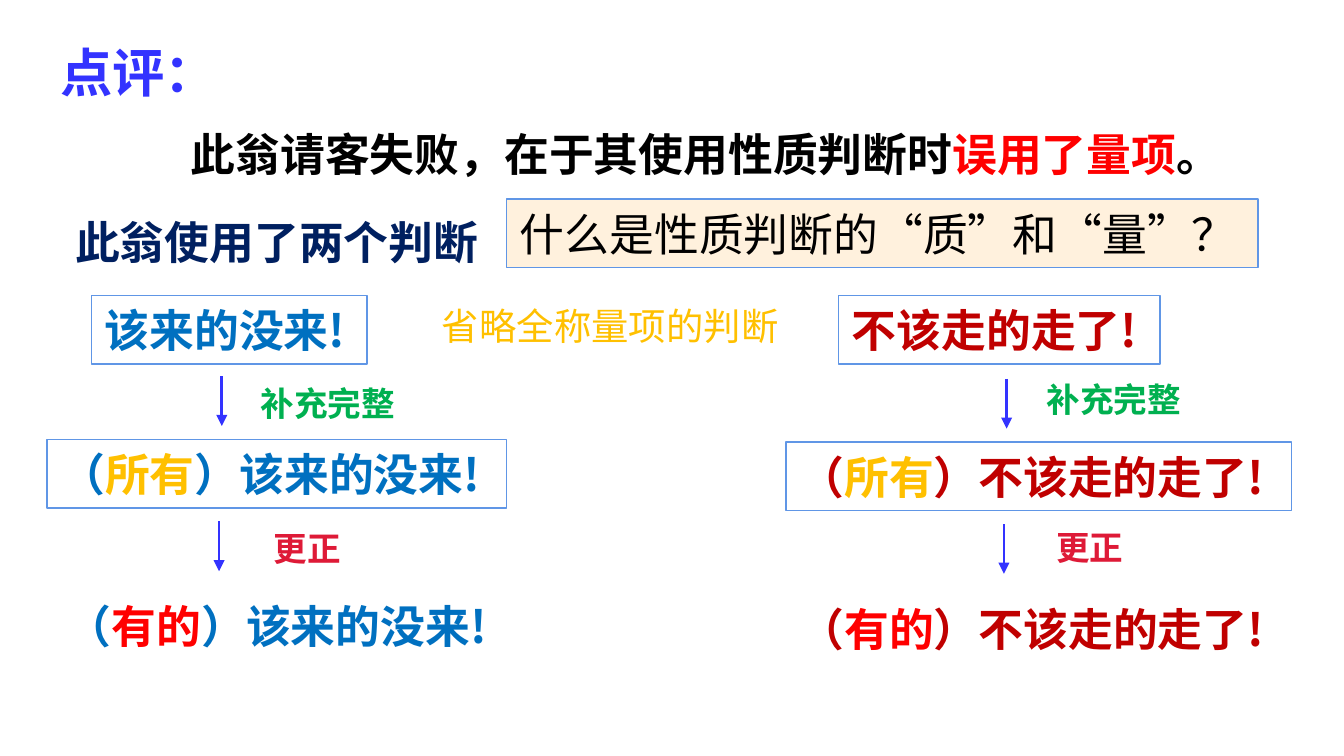
from lxml import etree
from pptx import Presentation
from pptx.dml.color import RGBColor
from pptx.enum.shapes import MSO_CONNECTOR as Conn, MSO_SHAPE as Shape
from pptx.enum.text import MSO_ANCHOR as Anchor, PP_ALIGN as Align
from pptx.oxml.ns import qn
from pptx.util import Inches, Pt

SANS = "Noto Sans CJK SC"
BLUE, DARK, RED, GOLD = "0070C0", "C00000", "FF0000", "FFC000"
GREEN, ROSE, INK, EDGE = "00B050", "DE1A37", "3333FF", "6096E6"


def color(code):
    return RGBColor.from_string(code)


def write(shape, runs, size=24, bold=True, font=SANS):
    """Fill a shape with one line made of (text, colour) runs."""
    frame = shape.text_frame
    frame.word_wrap = False
    frame.vertical_anchor = Anchor.MIDDLE
    para = frame.paragraphs[0]
    para.alignment = Align.LEFT
    for text, code in runs:
        run = para.add_run()
        run.text = text
        run.font.size, run.font.bold, run.font.name = Pt(size), bold, font
        run.font.color.rgb = color(code)
        east = etree.SubElement(run.font._element, qn("a:ea"))
        east.set("typeface", SANS)


def label(slide, box, runs, **form):
    shape = slide.shapes.add_textbox(*map(Inches, box))
    write(shape, runs, **form)


def panel(slide, box, runs, fill=None, **form):
    shape = slide.shapes.add_shape(Shape.RECTANGLE, *map(Inches, box))
    shape.shadow.inherit = False
    if fill:
        shape.fill.solid()
        shape.fill.fore_color.rgb = color(fill)
    else:
        shape.fill.background()
    shape.line.color.rgb = color(EDGE)
    shape.line.width = Pt(0.75)
    write(shape, runs, **form)


def arrow(slide, x, y, high=0.37):
    line = slide.shapes.add_connector(
        Conn.STRAIGHT, Inches(x), Inches(y), Inches(x), Inches(y + high))
    line.line.color.rgb = color(INK)
    line.line.width = Pt(1.5)
    tail = etree.SubElement(line.line._get_or_add_ln(), qn("a:tailEnd"))
    tail.set("type", "triangle")
    etree.SubElement(line._element.spPr, qn("a:effectLst"))


def header(slide, x, y):
    # Title and main point
    title = slide.shapes.title
    title.left, title.top = Inches(x), Inches(y)
    title.width, title.height = Inches(1.38), Inches(0.57)
    write(title, [("点评：", INK)], size=28, font="Arial")
    label(slide, (x + 0.97, y + 0.64, 7.98, 0.5),
          [("此翁请客失败，在于其使用性质判断时", "000000"),
           ("误用了量项", RED), ("。", "000000")])
    # Lead-in and question
    label(slide, (x + 0.11, y + 1.29, 3.25, 0.51),
          [("此翁使用了两个判断", "002060")])
    panel(slide, (x + 3.42, y + 1.23, 5.59, 0.51),
          [("什么是性质判断的“质”和“量”？", "000000")],
          fill="FFF1DD", bold=False, font="Arial")


def column(slide, x, y, text, code, first, full, last, mid, notes, drop):
    """first, full, last: (offset, width); mid: arrow offset;
    notes: label offsets (x, y); drop: shift of the lower steps."""
    def quant(word, tint):
        return [("（", code), (word, tint), ("）" + text, code)]

    # Statement, completed form, corrected form
    panel(slide, (x + first[0], y, first[1], 0.51), [(text, code)])
    panel(slide, (x + full[0], y + 1.07 + drop, full[1], 0.51),
          quant("所有", GOLD))
    label(slide, (x + last[0], y + 2.2 + drop, last[1], 0.51),
          quant("有的", RED))
    # Steps between them
    steps = [("补充完整", GREEN, 1.21, 0.6), ("更正", ROSE, 0.71, 1.68)]
    for i, (word, tint, wide, top) in enumerate(steps):
        arrow(slide, x + mid - 0.02 * i, y + top + drop)
        dx, dy = notes[i]
        label(slide, (x + dx, y + top + dy, wide, 0.4),
              [(word, tint)], size=18)


def main():
    deck = Presentation()
    deck.slide_width = Inches(10)
    deck.slide_height = deck.slide_width * 9 // 16
    slide = deck.slides.add_slide(deck.slide_layouts[5])
    header(slide, 0.35, 0.25)
    column(slide, 0.35, 2.2, "该来的没来!", BLUE, first=(0.33, 2.05),
           full=(0, 3.42), last=(0.05, 3.42), mid=1.3,
           notes=[(1.49, 0), (1.59, 0)], drop=0)
    label(slide, (3.19, 2.2, 2.73, 0.44), [("省略全称量项的判断", GOLD)],
          size=20, bold=False)
    column(slide, 5.85, 2.2, "不该走的走了!", DARK, first=(0.39, 2.39),
           full=(0, 3.76), last=(0, 3.71), mid=1.64,
           notes=[(1.84, -0.03), (1.91, -0.01)], drop=0.02)
    deck.save("out.pptx")


if __name__ == "__main__":
    main()
